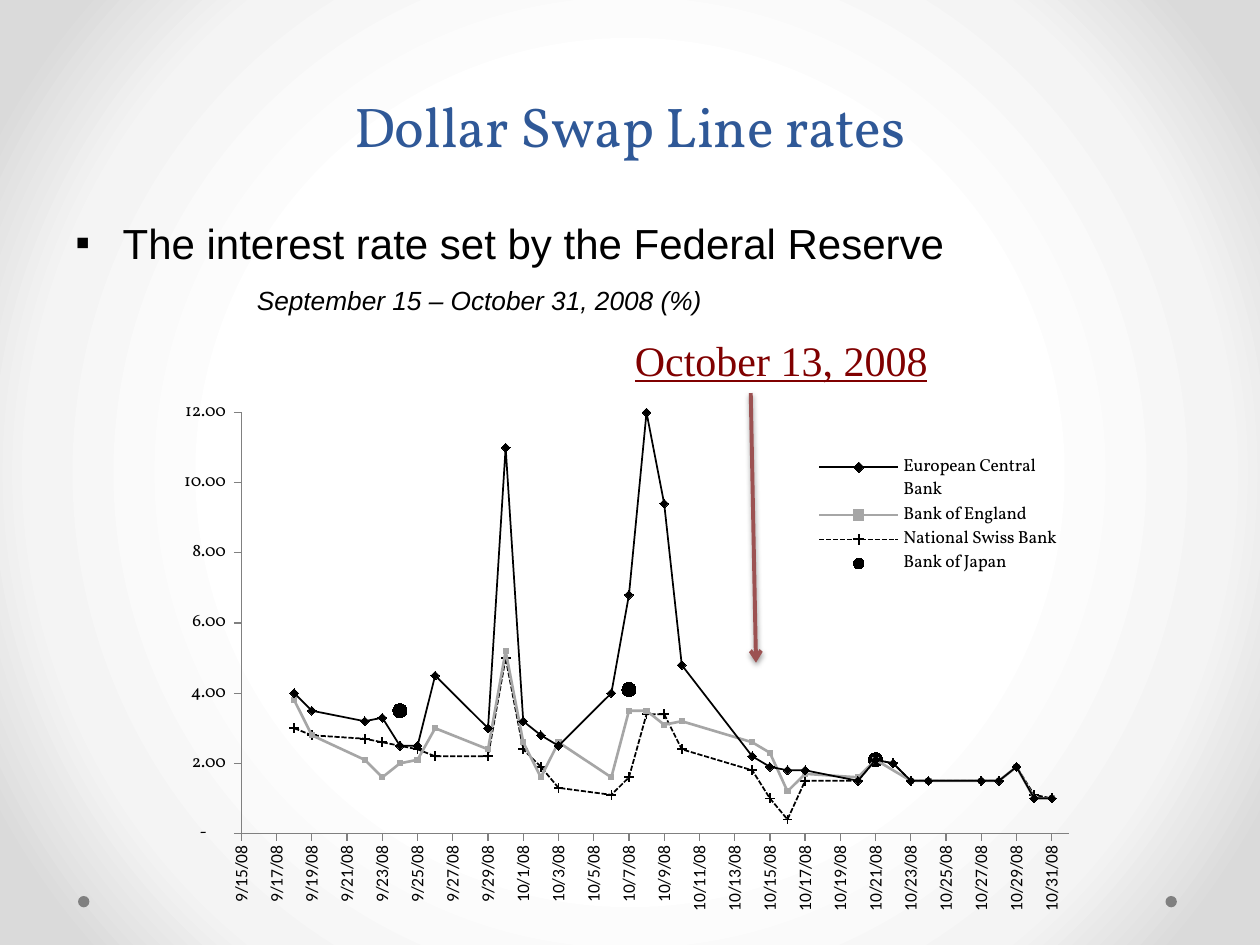
from lxml import etree
from pptx import Presentation
from pptx.chart.data import XyChartData
from pptx.dml.color import RGBColor
from pptx.enum.chart import (XL_AXIS_CROSSES as Crosses, XL_CHART_TYPE as ChartType,
                             XL_LEGEND_POSITION as LegendPos, XL_MARKER_STYLE as Marker,
                             XL_TICK_MARK as Tick)
from pptx.enum.dml import MSO_LINE as Dash
from pptx.enum.shapes import MSO_CONNECTOR as Connector, MSO_SHAPE as Shape
from pptx.enum.text import MSO_ANCHOR as Anchor, PP_ALIGN as Align
from pptx.oxml import parse_xml
from pptx.oxml.ns import nsdecls, qn
from pptx.util import Pt

BLACK = RGBColor(0, 0, 0)
TITLE_BLUE = RGBColor(0x2F, 0x58, 0x97)
DATE_RED = RGBColor(0x80, 0, 0)
ARROW_RED = RGBColor(0x9C, 0x52, 0x52)
DOT_GRAY = RGBColor(0x80, 0x80, 0x80)
SERIES_GRAY = RGBColor(0xA6, 0xA6, 0xA6)

BACKDROP_STOPS = [(50, "FFFFFF"), (76, "F4F4F4"), (92, "DADADA")]
FIRST_DAY = 39706  # serial date of 9/15/08
DAYS = [3, 4, 7, 8, 9, 10, 11, 14, 15, 16, 17, 18, 21, 22, 23, 24, 25, 29, 30,
        31, 32, 35, 36, 37, 38, 39, 42, 43, 44, 45, 46]
ECB = [4, 3.5, 3.2, 3.3, 2.5, 2.5, 4.5, 3, 11, 3.2, 2.8, 2.5, 4, 6.8, 12, 9.4, 4.8, 2.2,
       1.9, 1.8, 1.8, 1.5, 2.1, 2, 1.5, 1.5, 1.5, 1.5, 1.9, 1, 1]
ENGLAND = [3.8, 2.8, 2.1, 1.6, 2, 2.1, 3, 2.4, 5.2, 2.6, 1.6, 2.6, 1.6, 3.5, 3.5, 3.1,
           3.2, 2.6, 2.3, 1.2, 1.7, 1.6, 2.1, None, 1.5, 1.5, 1.5, 1.5, 1.9, 1, 1]
SWISS = [3, 2.8, 2.7, 2.6, 2.5, 2.4, 2.2, 2.2, 5, 2.4, 1.9, 1.3, 1.1, 1.6, 3.4, 3.4, 2.4,
         1.8, 1, 0.4, 1.5, 1.5, 2.1, 2, 1.5, 1.5, 1.5, 1.5, 1.9, 1.1, 1]
JAPAN = [{9: 3.5, 22: 4.1, 36: 2.1}.get(day) for day in DAYS]
# name, rates, colour, line width, dash, marker, marker size
SERIES = [
    ("European Central Bank", ECB, BLACK, 1, None, Marker.DIAMOND, 5),
    ("Bank of England", ENGLAND, SERIES_GRAY, 1.5, None, Marker.SQUARE, 3),
    ("National Swiss Bank", SWISS, BLACK, 1, Dash.SQUARE_DOT, Marker.PLUS, 5),
    ("Bank of Japan", JAPAN, BLACK, 0, None, Marker.CIRCLE, 8),
]


def set_font(font, color, **values):
    font.color.rgb = color
    for name, value in values.items():
        setattr(font, name, value)


def add_backdrop(slide):
    stops = "".join(f'<a:gs pos="{pos * 1000}"><a:srgbClr val="{color}"/></a:gs>'
                    for pos, color in BACKDROP_STOPS)
    slide._element.cSld.insert(0, parse_xml(
        f'<p:bg {nsdecls("p", "a")}><p:bgPr><a:gradFill><a:gsLst>{stops}</a:gsLst>'
        '<a:path path="circle"><a:fillToRect l="50000" t="50000" r="50000" b="50000"/>'
        '</a:path></a:gradFill><a:effectLst/></p:bgPr></p:bg>'))


def add_corner_dots(slide, lefts, top, size):
    for left in lefts:
        dot = slide.shapes.add_shape(Shape.OVAL, Pt(left), Pt(top), Pt(size), Pt(size))
        dot.shadow.inherit = False
        dot.fill.solid()
        dot.fill.fore_color.rgb = DOT_GRAY
        dot.line.fill.background()


def fill_title(slide, left, top, width, height):
    title = slide.shapes.title
    title.left, title.top, title.width, title.height = map(Pt, (left, top, width, height))
    tf = title.text_frame
    tf.text = "Dollar Swap Line rates"
    tf.vertical_anchor = Anchor.BOTTOM
    p = tf.paragraphs[0]
    p.alignment, p.line_spacing = Align.CENTER, Pt(58)
    set_font(p.runs[0].font, TITLE_BLUE, name="Vollkorn", size=Pt(32))


def add_body(slide, left, top, width, height):
    tf = slide.shapes.add_textbox(*map(Pt, (left, top, width, height))).text_frame
    tf.word_wrap = True
    # text, left margin, first-line indent, space before, colour, font
    lines = [
        ("The interest rate set by the Federal Reserve", 27, -27, 0, BLACK,
         dict(name="Arial", size=Pt(24))),
        ("September 15 – October 31, 2008 (%)", 103.7, 0, 3.7, BLACK,
         dict(name="Arial", size=Pt(15), italic=True)),
        ("October 13, 2008", 319.7, 0, 4.5, DATE_RED,
         dict(name="Times New Roman", size=Pt(24), underline=True)),
    ]
    for i, (text, margin, indent, before, color, font) in enumerate(lines):
        p = tf.add_paragraph() if i else tf.paragraphs[0]
        p.alignment, p.space_before, p.space_after = Align.JUSTIFY, Pt(before), Pt(6)
        pPr = p._p.get_or_add_pPr()
        pPr.set("marL", str(Pt(margin)))
        pPr.set("indent", str(Pt(indent)))
        if indent:
            etree.SubElement(pPr, qn("a:buFont")).set("typeface", "Arial")
            etree.SubElement(pPr, qn("a:buChar")).set("char", "▪")
        r = p.add_run()
        r.text = text
        set_font(r.font, color, **font)


def manual_layout(x, y, w, h, inner=False):
    target = '<c:layoutTarget val="inner"/>' if inner else ""
    sizes = "".join(f'<c:{k} val="{v}"/>' for k, v in zip("xywh", (x, y, w, h)))
    return parse_xml(f'<c:layout {nsdecls("c")}><c:manualLayout>{target}'
                     '<c:xMode val="edge"/><c:yMode val="edge"/>'
                     f'{sizes}</c:manualLayout></c:layout>')


def drop_layout(element):
    for layout in element.findall(qn("c:layout")):
        element.remove(layout)


def format_axis(axis, low, high, step, number_format, font_name):
    values = dict(minimum_scale=low, maximum_scale=high, major_unit=step,
                  has_major_gridlines=False, major_tick_mark=Tick.OUTSIDE,
                  minor_tick_mark=Tick.NONE, crosses=Crosses.MINIMUM)
    for name, value in values.items():
        setattr(axis, name, value)
    axis.format.line.color.rgb = DOT_GRAY
    labels = axis.tick_labels
    labels.number_format, labels.number_format_is_linked = number_format, False
    set_font(labels.font, BLACK, name=font_name, size=Pt(10))


def format_series(series, color, width, dash, style, size):
    series.smooth = False
    line, marker = series.format.line, series.marker
    if width:
        line.color.rgb, line.width = color, Pt(width)
        if dash:
            line.dash_style = dash
    else:
        line.fill.background()
    marker.style, marker.size = style, size
    marker.format.fill.solid()
    marker.format.fill.fore_color.rgb = color
    marker.format.line.color.rgb = color


def add_rates_chart(slide, left, top, width, height):
    data = XyChartData()
    for name, rates, *_ in SERIES:
        points = data.add_series(name)
        for day, rate in zip(DAYS, rates):
            if rate is not None:
                points.add_data_point(FIRST_DAY + day, rate)
    chart = slide.shapes.add_chart(ChartType.XY_SCATTER_LINES,
                                   *map(Pt, (left, top, width, height)), data).chart
    chart.has_title = False
    set_font(chart.font, BLACK, name="Vollkorn", size=Pt(10))
    chart.plots[0].vary_by_categories = False
    for series, (_, _, *look) in zip(chart.plots[0].series, SERIES):
        format_series(series, *look)

    dates = chart.category_axis
    format_axis(dates, FIRST_DAY, FIRST_DAY + 47, 2, "m/d/yy", "Calibri")
    body = dates._element.find(qn("c:txPr")).find(qn("a:bodyPr"))
    body.set("rot", "-5400000")
    body.set("vert", "horz")
    format_axis(chart.value_axis, 0, 12, 2,
                '_(* #,##0.00_);_(* (#,##0.00);_(* "-"??_);_(@_)', "Vollkorn")

    plot_area = chart._chartSpace.chart.plotArea
    drop_layout(plot_area)
    plot_area.insert(0, manual_layout(0.067, 0.117, 0.887, 0.746, inner=True))
    chart.has_legend = True
    legend = chart.legend
    legend.position, legend.include_in_layout = LegendPos.RIGHT, False
    set_font(legend.font, BLACK, name="Vollkorn", size=Pt(10))
    drop_layout(legend._element)
    legend._element.find(qn("c:legendPos")).addnext(manual_layout(0.678, 0.192, 0.27, 0.215))


def add_date_arrow(slide, *ends):
    arrow = slide.shapes.add_connector(Connector.STRAIGHT, *map(Pt, ends))
    arrow.line.color.rgb, arrow.line.width = ARROW_RED, Pt(2.25)
    etree.SubElement(arrow.line._get_or_add_ln(), qn("a:tailEnd")).set("type", "arrow")
    arrow._element.spPr.append(parse_xml(
        f'<a:effectLst {nsdecls("a")}><a:outerShdw blurRad="{Pt(3.1)}" dist="{Pt(1.6)}" '
        'dir="5400000" rotWithShape="0"><a:srgbClr val="000000"><a:alpha val="38000"/>'
        '</a:srgbClr></a:outerShdw></a:effectLst>'))


def main():
    prs = Presentation()
    prs.slide_width, prs.slide_height = Pt(720), Pt(540)
    slide = prs.slides.add_slide(prs.slide_layouts[5])
    add_backdrop(slide)
    add_corner_dots(slide, (666, 44.6), 512, 6.5)
    fill_title(slide, 36, 0, 648, 94.5)
    add_body(slide, 36, 120.6, 648, 375)
    add_rates_chart(slide, 102.2, 198, 533.5, 322.6)
    add_date_arrow(slide, 429, 224.6, 432, 378.7)
    prs.save("out.pptx")


if __name__ == "__main__":
    main()
